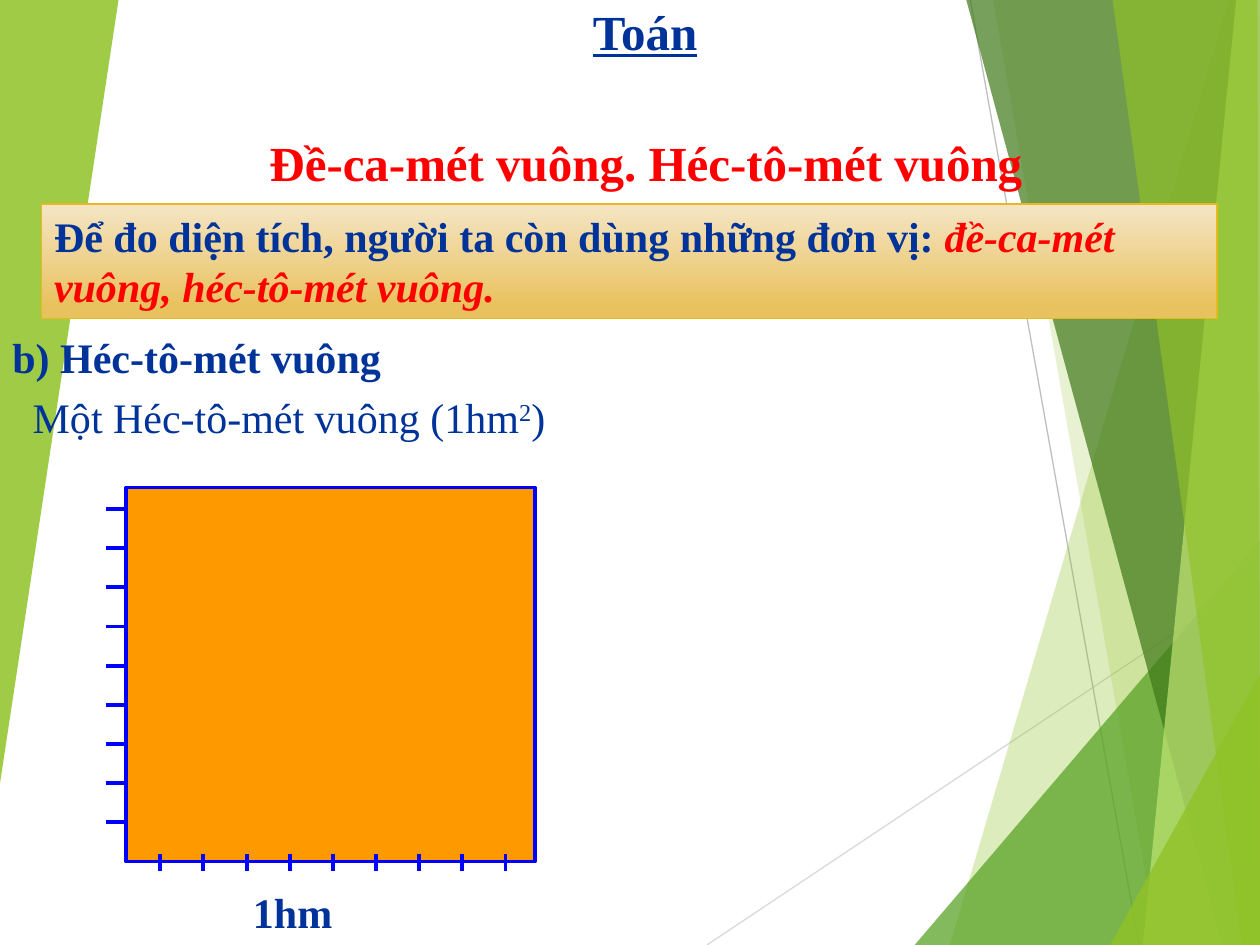
from lxml import etree
from pptx import Presentation
from pptx import util as u
from pptx.dml import color
from pptx.enum import shapes, text
from pptx.oxml import ns

WIDTH, HEIGHT = 25.4, 19.05
NAVY, RED, BLUE, LIME = "003399", "FF0000", "0000FF", "90C226"
BOLD = {"bold": True}
HEADING = {"bold": True, "size": u.Pt(28)}


def rgb(value):
    return color.RGBColor.from_string(value)


def apply(target, values):
    for name, value in values.items():
        setattr(target, name, value)


class LessonSlide:
    base = {"name": "Times New Roman", "size": u.Pt(24)}

    def __init__(self, presentation):
        self.slide = presentation.slides.add_slide(presentation.slide_layouts[5])
        self.shapes = self.slide.shapes

    def fill_text(self, shape, runs, paragraph_format=None):
        """Each run is (words, colour, font values, superscript percent)."""
        frame = shape.text_frame
        apply(frame, {"word_wrap": True, "vertical_anchor": text.MSO_ANCHOR.TOP,
                      "auto_size": text.MSO_AUTO_SIZE.SHAPE_TO_FIT_TEXT})
        paragraph = frame.paragraphs[0]
        apply(paragraph, {"alignment": text.PP_ALIGN.LEFT, **(paragraph_format or {})})
        for words, colour, values, raised in runs:
            run = paragraph.add_run()
            run.text = words
            apply(run.font, {**self.base, **values})
            run.font.color.rgb = rgb(colour)
            if raised:
                run._r.get_or_add_rPr().set("baseline", str(raised * 1000))

    def title(self, box, runs, paragraph_format):
        shape = self.shapes.title
        apply(shape, dict(zip(("left", "top", "width", "height"), map(u.Cm, box))))
        self.fill_text(shape, runs, paragraph_format)

    def label(self, box, runs, paragraph_format=None):
        self.fill_text(self.shapes.add_textbox(*map(u.Cm, box)), runs, paragraph_format)

    def rectangle(self, box, line, width):
        shape = self.shapes.add_shape(shapes.MSO_SHAPE.RECTANGLE, *map(u.Cm, box))
        shape.shadow.inherit = False
        shape.line.color.rgb = rgb(line)
        shape.line.width = u.Pt(width)
        return shape

    def line(self, start, end, colour, width):
        connector = self.shapes.add_connector(
            shapes.MSO_CONNECTOR.STRAIGHT, *map(u.Cm, (*start, *end)))
        connector.line.color.rgb = rgb(colour)
        connector.line.width = u.Pt(width)
        etree.SubElement(connector._element.spPr, ns.qn("a:effectLst"))

    def facet(self, points, colour, opacity):
        corners = [(u.Cm(x), u.Cm(y)) for x, y in points]
        builder = self.shapes.build_freeform(*corners[0])
        builder.add_line_segments(corners[1:], close=True)
        shape = builder.convert_to_shape()
        shape.shadow.inherit = False
        shape.line.fill.background()
        shape.fill.solid()
        shape.fill.fore_color.rgb = rgb(colour)
        colour_node = shape._element.spPr.find(".//" + ns.qn("a:srgbClr"))
        etree.SubElement(colour_node, ns.qn("a:alpha"), val=str(opacity * 1000))


def main():
    presentation = Presentation()
    presentation.slide_width, presentation.slide_height = u.Cm(WIDTH), u.Cm(HEIGHT)
    lesson = LessonSlide(presentation)
    centred = {"alignment": text.PP_ALIGN.CENTER}

    # Background lines and translucent facets
    lesson.line((14.25, HEIGHT), (WIDTH, 11.61), "D9D9D9", 0.75)
    lesson.line((19.56, 0), (22.96, HEIGHT), "BFBFBF", 0.75)
    corner, top_corner = (WIDTH, HEIGHT), (WIDTH, 0)
    facets = [
        ([(24.77, 0), (19.15, HEIGHT), corner, top_corner], LIME, 30),
        ([(20.02, 0), (23.34, HEIGHT), corner, top_corner], LIME, 20),
        ([(18.44, HEIGHT), (WIDTH, 10.9), corner], "54A021", 72),
        ([(19.48, 0), (24.64, HEIGHT), corner, top_corner], "3F7819", 70),
        ([(24.92, 0), (23.04, HEIGHT), corner, top_corner], "C0E474", 70),
        ([(22.43, 0), (25.04, HEIGHT), corner, (25.35, 0)], LIME, 65),
        ([(22.38, HEIGHT), (WIDTH, 13.59), corner], LIME, 80),
        ([(0, 0), (2.39, 0), (0, 15.8)], LIME, 85),
    ]
    for facet in facets:
        lesson.facet(*facet)

    # Headings and text
    lesson.title((4.65, -0.1, 16.71, 1.45),
                 [("Toán", NAVY, {**HEADING, "underline": True}, 0)], centred)
    lesson.label((2.54, 2.54, 20.96, 1.45),
                 [("Đề-ca-mét vuông. Héc-tô-mét vuông", RED, HEADING, 0)], centred)
    lesson.label((0, 6.55, 10.16, 1.3), [("b) Héc-tô-mét vuông", NAVY, BOLD, 0)])
    lesson.label((0.41, 7.62, 11.89, 2.64),
                 [("Một Héc-tô-mét vuông (1hm", NAVY, {}, 0),
                  ("2", NAVY, {}, 30), (")", NAVY, {}, 0)],
                 {"line_spacing": 1.15, "space_after": u.Pt(10)})
    lesson.label((4.85, 17.75, 2.74, 1.3), [("1hm", NAVY, BOLD, 0)])

    # Square with nine tick marks on two sides
    square = lesson.rectangle((2.54, 9.83, 8.25, 7.54), BLUE, 2)
    square.fill.solid()
    square.fill.fore_color.rgb = rgb("FF9900")
    for step in range(9):
        x, y = 3.23 + 0.87 * step, 10.26 + 0.79 * step
        lesson.line((x, 17.22), (x, 17.56), BLUE, 2.25)
        lesson.line((2.13, y), (2.51, y), BLUE, 2.25)

    # Gradient banner
    banner = lesson.rectangle((0.84, 4.11, 23.7, 2.31), "E6B91E", 1)
    banner.fill.gradient()
    banner.fill.gradient_angle = 270
    stops = zip(banner.fill.gradient_stops, (0, 0.88), ("F5E5C5", "E9C260"))
    for stop, position, colour in stops:
        stop.position = position
        stop.color.rgb = rgb(colour)
    lesson.fill_text(banner, [
        ("Để đo diện tích, người ta còn dùng những đơn vị: ", NAVY, BOLD, 0),
        ("đề-ca-mét vuông, héc-tô-mét vuông.", RED, {**BOLD, "italic": True}, 0)])

    presentation.save("out.pptx")


if __name__ == "__main__":
    main()
